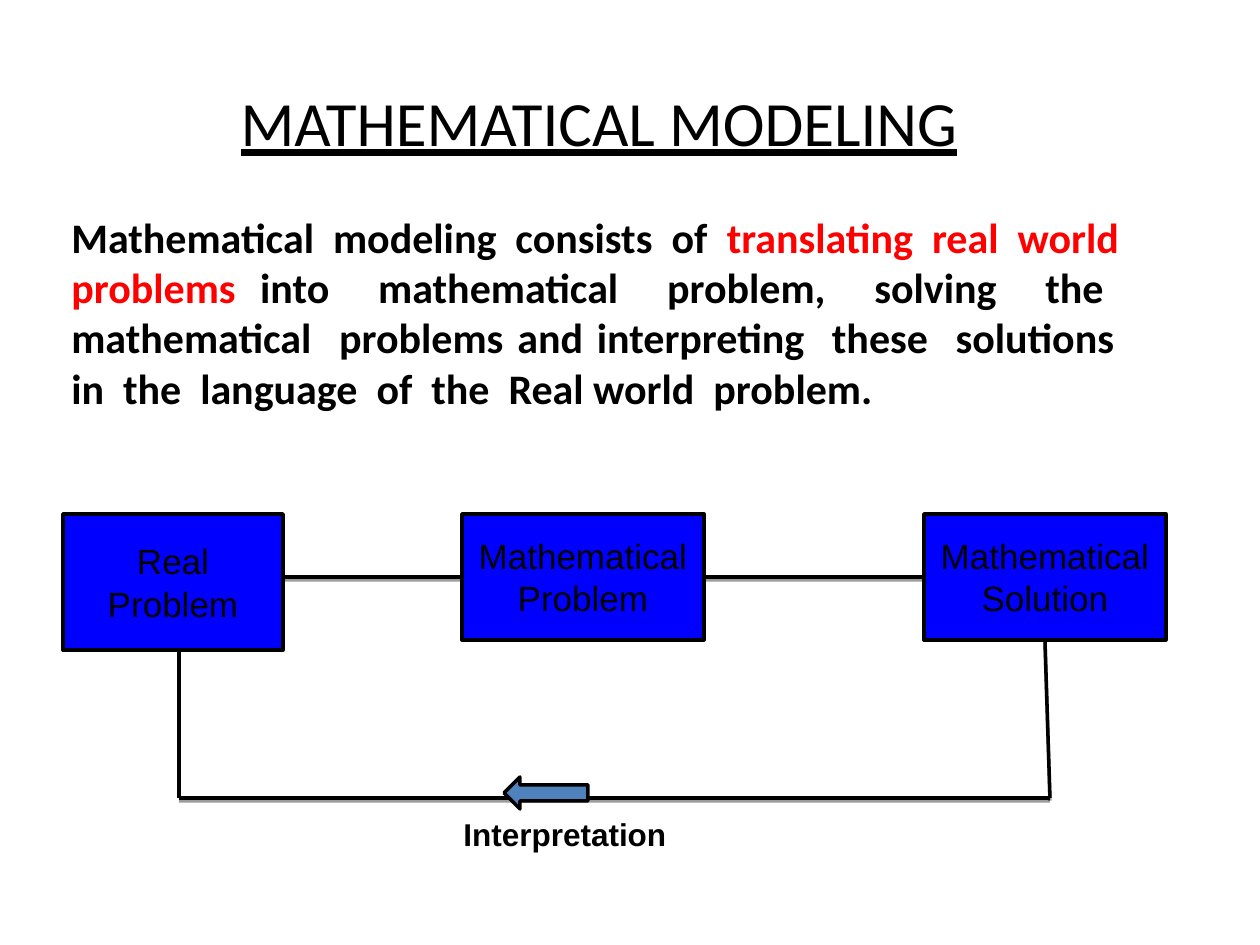
from lxml import etree
from pptx import Presentation
from pptx.dml.color import RGBColor
from pptx.enum import shapes, text
from pptx.oxml.ns import qn
from pptx.util import Emu, Pt

PX = 914400 / 126
THEME = {
    "ink": RGBColor(0, 0, 0), "accent": RGBColor(255, 0, 0),
    "box": RGBColor(0, 0, 255), "arrow": RGBColor(0x4F, 0x81, 0xBD),
    "heading": "Calibri", "label": "Arial",
    "title_size": 36, "body_size": 24, "box_size": 20, "small_size": 18,
    "line": 2, "return_line": 2.25,
}


def px(*lengths):
    return [Emu(round(length * PX)) for length in lengths]


def write(shape, runs, align, anchor, font_name):
    frame = shape.text_frame
    frame.word_wrap = True
    frame.vertical_anchor = anchor
    paragraph = frame.paragraphs[0]
    paragraph.alignment = align
    for wording, size, color, style in runs:
        run = paragraph.add_run()
        run.text = wording
        run.font.color.rgb = color
        for key, value in {"name": font_name, "size": Pt(size), **style}.items():
            setattr(run.font, key, value)


deck = Presentation()
deck.slide_width, deck.slide_height = px(1260, 945)
slide = deck.slides.add_slide(deck.slide_layouts[6])
ink, align, anchor = THEME["ink"], text.PP_ALIGN, text.MSO_ANCHOR
bold = {"bold": True}

# Title
title = slide.shapes.add_textbox(*px(58, 42, 1082, 158))
write(title, [("MATHEMATICAL MODELING", THEME["title_size"], ink, {"underline": True})],
      align.CENTER, anchor.MIDDLE, THEME["heading"])

# Definition
definition = slide.shapes.add_textbox(*px(59, 205, 1082, 567))
write(definition, [
    ("Mathematical  modeling  consists  of  ", THEME["body_size"], ink, bold),
    ("translating  real  world  problems", THEME["body_size"], THEME["accent"], bold),
    (" into  mathematical  problem,  solving  the  mathematical  problems and "
     "interpreting  these  solutions  in  the  language  of  the  Real world  problem.",
     THEME["body_size"], ink, bold),
], align.JUSTIFY, anchor.TOP, THEME["heading"])

# Stages
stages = []
for label, left, width, height in [
    ("Real Problem", 63, 220, 136),
    ("Mathematical Problem", 462, 242, 126),
    ("Mathematical Solution", 924, 242, 126),
]:
    stage = slide.shapes.add_shape(shapes.MSO_SHAPE.RECTANGLE, *px(left, 514, width, height))
    stage.shadow.inherit = False
    stage.fill.solid()
    stage.fill.fore_color.rgb = THEME["box"]
    stage.line.color.rgb = ink
    stage.line.width = Pt(THEME["line"])
    write(stage, [(label, THEME["box_size"], ink, {})],
          align.CENTER, anchor.MIDDLE, THEME["label"])
    stages.append(stage)
real, problem, solution = stages

# Links between stages and the way back: ends, joined sides, width, shadow
for ends, begin, end, width, shaded in [
    ((283, 577, 462, 577), None, (problem, 1), THEME["line"], True),
    ((704, 577, 924, 577), (problem, 3), (solution, 1), THEME["line"], True),
    ((179, 798, 1050, 798), None, None, THEME["line"], True),
    ((1050, 798, 1045, 640), None, (solution, 2), THEME["line"], True),
    ((179, 798, 179, 651), None, None, THEME["return_line"], False),
]:
    link = slide.shapes.add_connector(shapes.MSO_CONNECTOR.STRAIGHT, *px(*ends))
    if begin:
        link.begin_connect(*begin)
    if end:
        link.end_connect(*end)
    link.line.color.rgb = ink
    link.line.width = Pt(width)
    effects = etree.SubElement(link._element.spPr, qn("a:effectLst"))
    if shaded:
        shadow = etree.SubElement(effects, qn("a:outerShdw"), blurRad="0",
                                  dist=str(Pt(1.6)), dir="5400000", rotWithShape="0")
        shade = etree.SubElement(shadow, qn("a:srgbClr"), val=str(ink))
        etree.SubElement(shade, qn("a:alpha"), val="38000")

# Interpretation arrow and label
arrow = slide.shapes.add_shape(shapes.MSO_SHAPE.LEFT_ARROW, *px(504, 777, 84, 32))
arrow.shadow.inherit = False
arrow.fill.solid()
arrow.fill.fore_color.rgb = THEME["arrow"]
arrow.line.color.rgb = ink
arrow.line.width = Pt(THEME["line"])

interpretation = slide.shapes.add_textbox(*px(451, 809, 262, 107))
write(interpretation, [("Interpretation", THEME["small_size"], ink, bold)],
      align.LEFT, anchor.TOP, THEME["label"])

deck.save("out.pptx")
